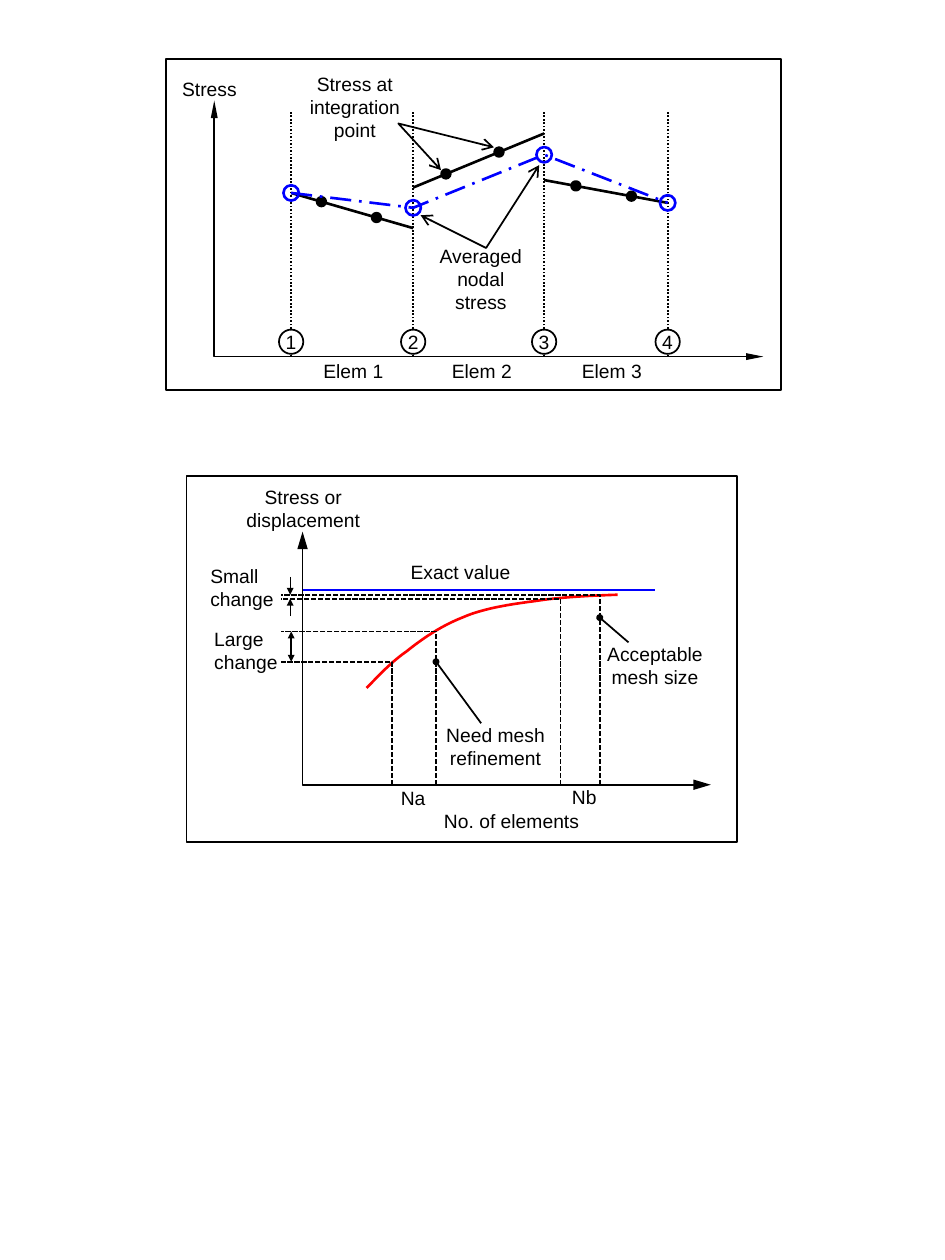
from dataclasses import dataclass
from itertools import pairwise
from typing import NamedTuple

from lxml import etree
from pptx import Presentation
from pptx import util as u
from pptx.dml.color import RGBColor
from pptx.enum import dml, shapes, text
from pptx.oxml.ns import qn


@dataclass(frozen=True)
class Theme:
    ink: RGBColor = RGBColor(0, 0, 0)
    paper: RGBColor = RGBColor(255, 255, 255)
    blue: RGBColor = RGBColor(0, 0, 255)
    red: RGBColor = RGBColor(255, 0, 0)
    font: str = "Arial"
    size: float = 11


T = Theme()
DOT = dml.MSO_LINE.ROUND_DOT
DASH = dml.MSO_LINE.SQUARE_DOT
CHAIN = dml.MSO_LINE.LONG_DASH_DOT


class Tip(NamedTuple):
    kind: str
    width: str = "sm"
    length: str = "sm"


class Pen(NamedTuple):
    color: RGBColor = T.ink
    width: float = 1
    dash: dml.MSO_LINE | None = None
    head: Tip | None = None
    tail: Tip | None = None


class Point(NamedTuple):
    x: float
    y: float


class Label(NamedTuple):
    words: str
    x: float
    y: float
    w: float
    h: float
    left: bool = False
    middle: bool = False


def ink(shape, pen: Pen) -> None:
    """Apply a pen to a shape or connector and drop its shadow."""
    shape.line.color.rgb = pen.color
    shape.line.width = u.Pt(pen.width)
    if pen.dash:
        shape.line.dash_style = pen.dash
    props = shape.element.spPr
    line = props.find(qn("a:ln"))
    for tag, tip in (("a:headEnd", pen.head), ("a:tailEnd", pen.tail)):
        if tip:
            etree.SubElement(line, qn(tag), type=tip.kind, w=tip.width, len=tip.length)
    if props.find(qn("a:effectLst")) is None:
        etree.SubElement(props, qn("a:effectLst"))


def rule(group, a: Point, b: Point, pen: Pen) -> None:
    ends = [u.Cm(v) for v in (*a, *b)]
    ink(group.shapes.add_connector(shapes.MSO_CONNECTOR.STRAIGHT, *ends), pen)


def trace(group, points: list[Point], pen: Pen) -> None:
    spots = [(u.Cm(x), u.Cm(y)) for x, y in points]
    build = group.shapes.build_freeform(*spots[0])
    build.add_line_segments(spots[1:], close=False)
    path = build.convert_to_shape()
    path.fill.background()
    ink(path, pen)


def form(group, kind, x: float, y: float, w: float, h: float, pen: Pen, fill=None):
    shape = group.shapes.add_shape(kind, u.Cm(x), u.Cm(y), u.Cm(w), u.Cm(h))
    if fill is None:
        shape.fill.background()
    else:
        shape.fill.solid()
        shape.fill.fore_color.rgb = fill
    ink(shape, pen)
    return shape


def disc(group, mid: Point, size: float, pen: Pen, fill=None):
    x, y = mid.x - size / 2, mid.y - size / 2
    return form(group, shapes.MSO_SHAPE.OVAL, x, y, size, size, pen, fill)


def write(frame, words: str, left: bool, middle: bool, wrap: bool) -> None:
    frame.margin_left = frame.margin_right = frame.margin_top = frame.margin_bottom = 0
    frame.word_wrap = wrap
    frame.vertical_anchor = text.MSO_ANCHOR.MIDDLE if middle else text.MSO_ANCHOR.TOP
    para = frame.paragraphs[0]
    para.text = words
    para.alignment = text.PP_ALIGN.LEFT if left else text.PP_ALIGN.CENTER
    para.font.name, para.font.size = T.font, u.Pt(T.size)
    para.font.color.rgb = T.ink


def note(group, tag: Label) -> None:
    box = group.shapes.add_textbox(u.Cm(tag.x), u.Cm(tag.y), u.Cm(tag.w), u.Cm(tag.h))
    write(box.text_frame, tag.words, tag.left, tag.middle, not tag.left)


def curve(start: Point, parts: list[tuple], steps: int = 12) -> list[Point]:
    """Points along a chain of cubic arcs."""
    points = [start]
    for arc in parts:
        ctrl = (points[-1], *arc)
        for i in range(1, steps + 1):
            t = i / steps
            wts = ((1 - t) ** 3, 3 * t * (1 - t) ** 2, 3 * t * t * (1 - t), t**3)
            points.append(Point(*(sum(k * p[n] for k, p in zip(wts, ctrl)) for n in (0, 1))))
    return points


def stress(group) -> None:
    # Axes and node lines
    base, nodes = 7.19, (5.87, 8.33, 10.97, 13.46)
    tip = Tip("triangle", "sm", "lg")
    trace(group, [Point(4.32, 2.03), Point(4.32, base), Point(15.39, base)], Pen(head=tip, tail=tip))
    for x in nodes:
        rule(group, Point(x, base), Point(x, 2.26), Pen(dash=DOT))

    # Element stresses with their integration points
    spans = (((3.89, 4.6), (6.48, 7.59)), ((3.78, 2.69), (8.99, 10.06)), ((3.63, 4.09), (11.61, 12.73)))
    for (x1, x2), ((y1, y2), dots) in zip(pairwise(nodes), spans):
        rule(group, Point(x1, y1), Point(x2, y2), Pen(width=1.5))
        for x in dots:
            y = y1 + (y2 - y1) * (x - x1) / (x2 - x1)
            disc(group, Point(x, y), 0.15, Pen(width=2.25), T.ink)

    # Averaged nodal stress
    means = [Point(x, y) for x, y in zip(nodes, (3.89, 4.19, 3.12, 4.09))]
    trace(group, means, Pen(T.blue, 1.5, CHAIN))
    for mean in means:
        disc(group, mean, 0.31, Pen(T.blue, 1.5))

    # Labels and callouts
    for tag in (
        Label("Stress", 3.35, 1.55, 1.75, 0.64),
        Label("Averaged nodal stress", 8.69, 4.93, 2.01, 1.5),
        Label("Stress at integration point", 6.15, 1.45, 2.01, 1.5),
    ):
        note(group, tag)
    for i, x in enumerate((6.25, 8.84, 11.46), 1):
        note(group, Label(f"Elem {i}", x, 7.24, 1.75, 0.64))
    tip = Tip("arrow", "med", "med")
    for path in (
        [Point(8.89, 3.43), Point(8.03, 2.49), Point(9.96, 2.97)],
        [Point(8.48, 4.34), Point(9.8, 5), Point(10.87, 3.33)],
    ):
        trace(group, path, Pen(head=tip, tail=tip))

    # Node numbers and frame
    for i, x in enumerate(nodes, 1):
        badge = disc(group, Point(x, 6.89), 0.49, Pen(), T.paper)
        write(badge.text_frame, str(i), False, True, False)
    form(group, shapes.MSO_SHAPE.RECTANGLE, 3.35, 1.19, 12.4, 6.68, Pen())


def mesh(group) -> None:
    # Axes, exact value and convergence curve
    base, tip = 15.82, Tip("triangle", "med", "lg")
    trace(group, [Point(6.1, 10.72), Point(6.1, base), Point(14.33, base)], Pen(head=tip, tail=tip))
    rule(group, Point(6.1, 11.89), Point(13.21, 11.89), Pen(T.blue))
    arcs = [
        ((7.65, 13.61), (7.87, 13.36), (8.2, 13.13)),
        ((8.51, 12.88), (8.89, 12.62), (9.32, 12.45)),
        ((9.73, 12.27), (10.24, 12.19), (10.77, 12.12)),
        ((11.28, 12.04), (11.86, 12.01), (12.45, 11.99)),
    ]
    trace(group, curve(Point(7.39, 13.87), arcs), Pen(T.red, 1.5))

    # Guides from the axis to the curve
    for x, y in ((7.9, 13.34), (8.79, 12.73), (11.3, 12.07), (12.09, 11.99)):
        trace(group, [Point(x, base), Point(x, y), Point(5.66, y)], Pen(dash=DASH))

    # Pointers and change arrows
    oval, tip = Tip("oval"), Tip("triangle")
    rule(group, Point(12.67, 12.95), Point(12.09, 12.45), Pen(tail=oval))
    rule(group, Point(9.7, 14.58), Point(8.79, 13.34), Pen(tail=oval))
    rule(group, Point(5.87, 12.73), Point(5.87, 13.34), Pen(head=tip, tail=tip))
    for y1, y2 in ((11.63, 11.99), (12.42, 12.07)):
        rule(group, Point(5.85, y1), Point(5.85, y2), Pen(width=0.75, tail=tip))

    # Labels and frame
    for tag in (
        Label("No. of elements", 8.08, 16.31, 4.47, 0.46),
        Label("Stress or displacement", 4.78, 9.78, 2.67, 0.94),
        Label("Exact value", 8.03, 11.3, 2.51, 0.46),
        Label("Acceptable mesh size", 11.96, 12.95, 2.49, 0.94),
        Label("Need mesh refinement", 8.81, 14.58, 2.36, 0.94),
        Label("Large\vchange", 4.32, 12.65, 1.3, 0.94, left=True),
        Label("Small\vchange", 4.24, 11.38, 1.3, 0.94, left=True),
        Label("Na", 8.08, 15.85, 0.51, 0.48, left=True, middle=True),
        Label("Nb", 11.53, 15.82, 0.51, 0.48, left=True, middle=True),
    ):
        note(group, tag)
    form(group, shapes.MSO_SHAPE.RECTANGLE, 3.76, 9.6, 11.1, 7.37, Pen())


def main() -> None:
    deck = Presentation()
    deck.slide_width, deck.slide_height = u.Cm(19.05), u.Cm(25.4)
    slide = deck.slides.add_slide(deck.slide_layouts[6])
    for draw in (stress, mesh):
        draw(slide.shapes.add_group_shape())
    deck.save("out.pptx")


if __name__ == "__main__":
    main()
